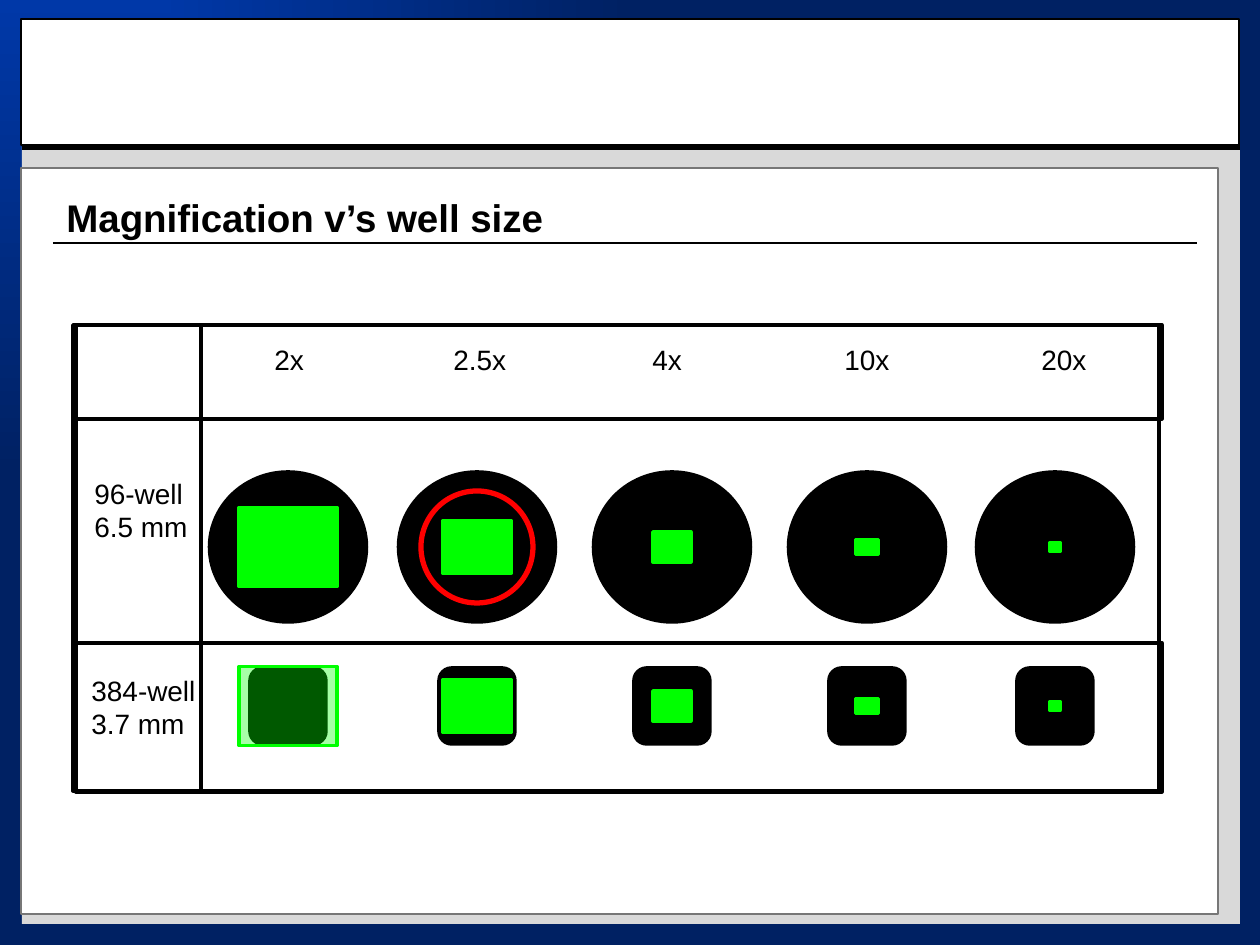
"""Build the slide comparing magnification with well size."""
import pptx
import pptx.dml.color
import pptx.enum.shapes
import pptx.enum.text
import pptx.oxml
import pptx.oxml.ns
import pptx.util
from lxml import etree

RGBColor = pptx.dml.color.RGBColor
SHAPE = pptx.enum.shapes.MSO_SHAPE
BLACK = RGBColor(0, 0, 0)
WHITE = RGBColor(255, 255, 255)
GREEN = RGBColor(0, 255, 0)
RED = RGBColor(255, 0, 0)
PANEL_GRAY = RGBColor(0xD9, 0xD9, 0xD9)
EDGE_GRAY = RGBColor(0x77, 0x77, 0x77)
BRIGHT_BLUE = RGBColor(0, 0x38, 0xA8)
DARK_BLUE = RGBColor(0, 0x21, 0x63)
PX = 914400 // 126

TITLE = ("Magnification v’s well size", (54, 188, 510, 59))
PANELS = [
    ((22, 147, 1218, 777), PANEL_GRAY, None, 0),
    ((21, 168, 1197, 746), WHITE, EDGE_GRAY, 0.75),
    ((21, 19, 1218, 126), WHITE, BLACK, 0.75),
]
RULES = [((22, 147, 1240, 147), 3), ((53, 243, 1197, 243), 0.75)]
GRID_OUTLINES = [
    (73, 325, 1086, 466),
    (76, 643, 1086, 149),
    (76, 325, 1086, 94),
    (76, 325, 125, 466),
]
ROW_LABELS = [
    (["96-well", "6.5 mm"], (82, 470, 120, 81)),
    (["384-well", "3.7 mm"], (79, 667, 130, 81)),
]
MAGNIFICATIONS = [
    {"label": "2x", "label_box": (262, 55), "center": 288, "view": (98, 79)},
    {"label": "2.5x", "label_box": (441, 79), "center": 477, "view": (68, 53)},
    {"label": "4x", "label_box": (640, 55), "center": 672, "view": (38, 30)},
    {"label": "10x", "label_box": (832, 71), "center": 867, "view": (23, 15)},
    {"label": "20x", "label_box": (1029, 71), "center": 1055, "view": (11, 8)},
]
WELLS = [
    (SHAPE.OVAL, (157, 150), 547),
    (SHAPE.ROUNDED_RECTANGLE, (76, 76), 706),
]
RING_COLUMN, RING_SIZE = "2.5x", (112, 112)
LABEL_TOP, LABEL_HEIGHT = 336, 47


def emu(lengths):
    return [length * PX for length in lengths]


def centered(x, y, size):
    width, height = size
    return x - width / 2, y - height / 2, width, height


def add_box(slide, kind, box, fill, line, weight):
    shape = slide.shapes.add_shape(kind, *[round(v) for v in emu(box)])
    shape.shadow.inherit = False
    if fill is None:
        shape.fill.background()
    else:
        shape.fill.solid()
        shape.fill.fore_color.rgb = fill
    if line is None:
        shape.line.fill.background()
    else:
        shape.line.color.rgb = line
        shape.line.width = pptx.util.Pt(weight)
    return shape


def add_rule(slide, ends, weight):
    rule = slide.shapes.add_connector(
        pptx.enum.shapes.MSO_CONNECTOR.STRAIGHT, *emu(ends))
    rule.line.color.rgb = BLACK
    rule.line.width = pptx.util.Pt(weight)
    etree.SubElement(rule.element.spPr, pptx.oxml.ns.qn("a:effectLst"))


def add_text(slide, lines, box, size=16, bold=False):
    frame = slide.shapes.add_textbox(*emu(box)).text_frame
    frame.word_wrap = False
    for index, line in enumerate(lines):
        paragraph = frame.add_paragraph() if index else frame.paragraphs[0]
        paragraph.alignment = pptx.enum.text.PP_ALIGN.LEFT
        run = paragraph.add_run()
        run.text = line
        run.font.name = "Arial"
        run.font.size = pptx.util.Pt(size)
        run.font.bold = bold
        run.font.color.rgb = BLACK


def make_translucent(shape, percent):
    color = shape.element.spPr.find(
        pptx.oxml.ns.qn("a:solidFill") + "/" + pptx.oxml.ns.qn("a:srgbClr"))
    etree.SubElement(color, pptx.oxml.ns.qn("a:alpha"), val=str(percent * 1000))


def paint_background(slide):
    fill = slide.background.fill
    fill.gradient()
    for stop, color, position in zip(
            fill.gradient_stops, (BRIGHT_BLUE, DARK_BLUE), (0, 1)):
        stop.color.rgb = color
        stop.position = position
    linear = next(slide.element.iter(pptx.oxml.ns.qn("a:lin")))
    radial = etree.Element(pptx.oxml.ns.qn("a:path"), {"path": "rect"})
    etree.SubElement(radial, pptx.oxml.ns.qn("a:fillToRect"),
                     r="100000", b="100000")
    linear.getparent().replace(linear, radial)


def add_wells(slide):
    for column in MAGNIFICATIONS:
        x, view = column["center"], column["view"]
        left, width = column["label_box"]
        add_text(slide, [column["label"]], (left, LABEL_TOP, width, LABEL_HEIGHT))
        for kind, size, y in WELLS:
            add_box(slide, kind, centered(x, y, size), BLACK, BLACK, 2)
            field = add_box(slide, SHAPE.RECTANGLE, centered(x, y, view),
                            GREEN, GREEN, 2)
            if view[0] > size[0]:
                make_translucent(field, 35)
        if column["label"] == RING_COLUMN:
            add_box(slide, SHAPE.OVAL, centered(x, WELLS[0][2], RING_SIZE),
                    None, RED, 3)


def main():
    deck = pptx.Presentation()
    deck.slide_width, deck.slide_height = emu((1260, 945))
    slide = deck.slides.add_slide(deck.slide_layouts[6])
    paint_background(slide)
    for panel in PANELS:
        add_box(slide, SHAPE.RECTANGLE, *panel)
    for ends, weight in RULES:
        add_rule(slide, ends, weight)
    title, title_box = TITLE
    add_text(slide, [title], title_box, 22, True)
    for lines, box in ROW_LABELS:
        add_text(slide, lines, box)
    for outline in GRID_OUTLINES:
        add_box(slide, SHAPE.RECTANGLE, outline, None, BLACK, 2)
    add_wells(slide)
    deck.save("out.pptx")


if __name__ == "__main__":
    main()
